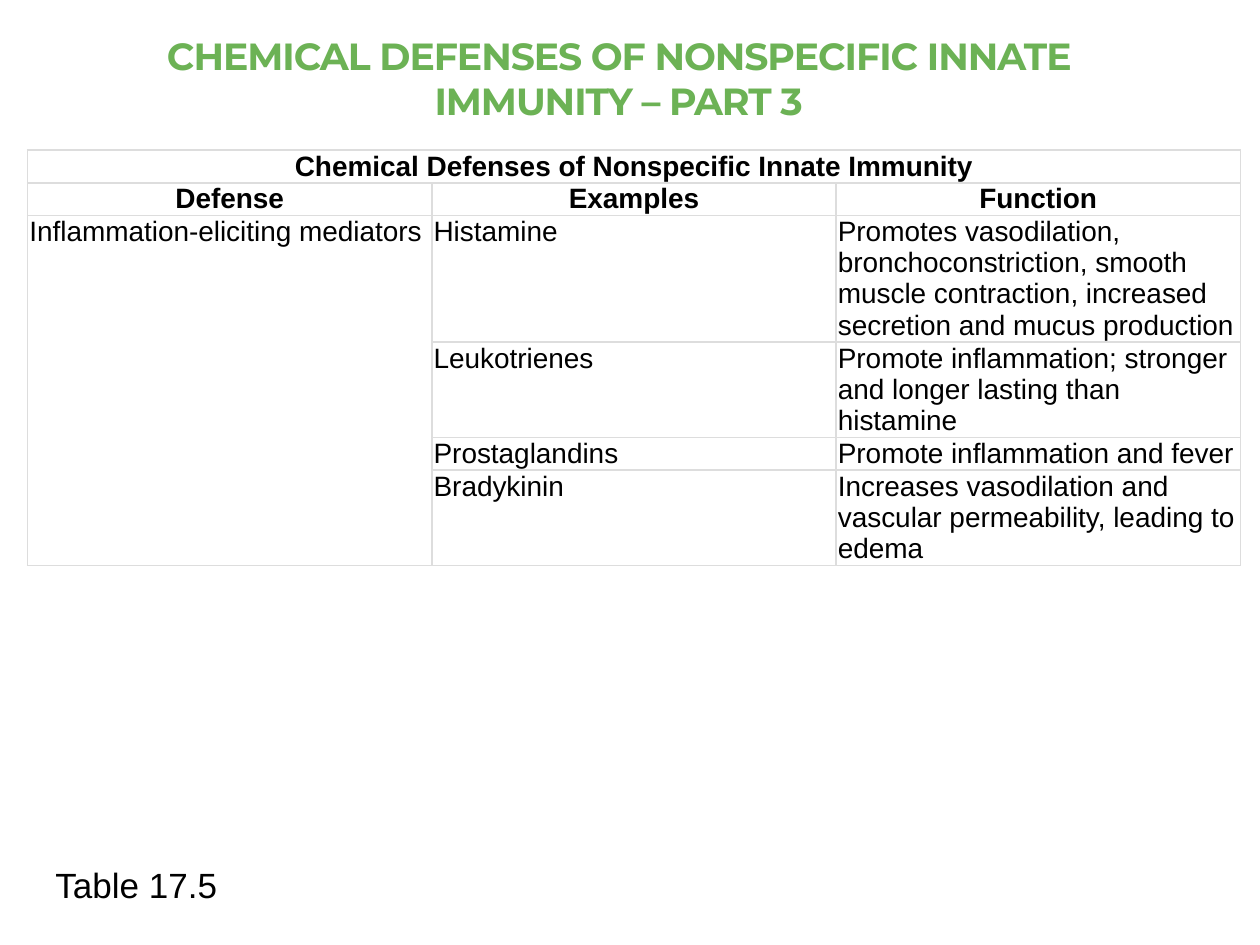
from lxml.etree import SubElement as Sub
from pptx import Presentation as Deck
from pptx.dml.color import RGBColor as RGB
from pptx.enum.text import MSO_ANCHOR as Anchor, MSO_AUTO_SIZE as Auto, PP_ALIGN as Align
from pptx.oxml import parse_xml
from pptx.oxml.ns import nsdecls, qn
from pptx.util import Pt

GREEN = RGB(0x6C, 0xB2, 0x55)
BLACK = RGB(0, 0, 0)
WHITE = RGB(0xFF, 0xFF, 0xFF)
GREY = RGB(0xDD, 0xDD, 0xDD)

HEADS = ["Defense", "Examples", "Function"]
GROUP = "Inflammation-eliciting mediators"
FACTS = [
    ("Histamine", "Promotes vasodilation, bronchoconstriction, smooth muscle "
     "contraction, increased secretion and mucus production"),
    ("Leukotrienes", "Promote inflammation; stronger and longer lasting than histamine"),
    ("Prostaglandins", "Promote inflammation and fever"),
    ("Bradykinin", "Increases vasodilation and vascular permeability, leading to edema"),
]
LINES = [1, 1, 4, 3, 1, 3]
LINE = 17.8
PAD = 0.5
WIDTH = 231


def place(shape, left, top, width, height):
    shape.left, shape.top = Pt(left), Pt(top)
    shape.width, shape.height = Pt(width), Pt(height)


def style(par, name, size, color, bold, align):
    par.alignment = align
    font = par.font
    font.name, font.size, font.bold = name, Pt(size), bold
    font.color.rgb = color


def add_title(slide, text):
    title = slide.shapes.title
    place(title, 36, 18.5, 635, 52)
    frame = title.text_frame
    frame.text = text
    frame.auto_size = Auto.NONE
    frame.vertical_anchor = Anchor.BOTTOM
    frame.margin_top = frame.margin_bottom = 0
    par = frame.paragraphs[0]
    style(par, "Montserrat", 21.6, GREEN, True, Align.CENTER)
    par.runs[0].font._element.set("spc", "-60")


def add_label(slide, text):
    body = slide.placeholders[1]
    place(body, 24.5, 489.6, 635, 31)
    frame = body.text_frame
    frame.text = text
    frame.auto_size = Auto.NONE
    par = frame.paragraphs[0]
    par.space_before, par.space_after = Pt(0), Pt(6)
    props = par._p.get_or_add_pPr()
    props.set("marL", "0")
    props.set("indent", "0")
    Sub(props, qn("a:buNone"))
    style(par, "Arial", 20, BLACK, False, Align.LEFT)


def add_edges(cell):
    props = cell._tc.get_or_add_tcPr()
    for i, side in enumerate("LRTB"):
        props.insert(i, parse_xml(
            f'<a:ln{side} w="{Pt(1)}" {nsdecls("a")}><a:solidFill>'
            f'<a:srgbClr val="{GREY}"/></a:solidFill></a:ln{side}>'))


def set_cell(cell, text, head):
    cell.text = text
    cell.margin_left = cell.margin_right = Pt(1)
    cell.margin_top = cell.margin_bottom = Pt(PAD)
    cell.vertical_anchor = Anchor.TOP
    cell.fill.solid()
    cell.fill.fore_color.rgb = WHITE
    add_edges(cell)
    align = Align.CENTER if head else Align.LEFT
    style(cell.text_frame.paragraphs[0], "Arial", 16, BLACK, head, align)


def add_grid(slide, name):
    rows = [[name, "", ""], HEADS]
    rows += [["" if i else GROUP, *fact] for i, fact in enumerate(FACTS)]
    highs = [n * LINE + 2 * PAD for n in LINES]
    grid = slide.shapes.add_table(
        len(rows), len(HEADS), Pt(15.8), Pt(85.7),
        Pt(WIDTH * len(HEADS)), Pt(sum(highs))).table
    grid.first_row = grid.horz_banding = False
    for col in grid.columns:
        col.width = Pt(WIDTH)
    for r, (row, high) in enumerate(zip(rows, highs)):
        grid.rows[r].height = Pt(high)
        for c, text in enumerate(row):
            set_cell(grid.cell(r, c), text, r < 2)
    grid.cell(0, 0).merge(grid.cell(0, 2))
    grid.cell(2, 0).merge(grid.cell(5, 0))
    grid.cell(0, 0).vertical_anchor = Anchor.BOTTOM


def main():
    deck = Deck()
    deck.slide_width, deck.slide_height = Pt(720), Pt(540)
    slide = deck.slides.add_slide(deck.slide_layouts[1])
    add_title(slide, "CHEMICAL DEFENSES OF NONSPECIFIC INNATE IMMUNITY – PART 3")
    add_label(slide, "Table 17.5")
    add_grid(slide, "Chemical Defenses of Nonspecific Innate Immunity")
    deck.save("out.pptx")


if __name__ == "__main__":
    main()
